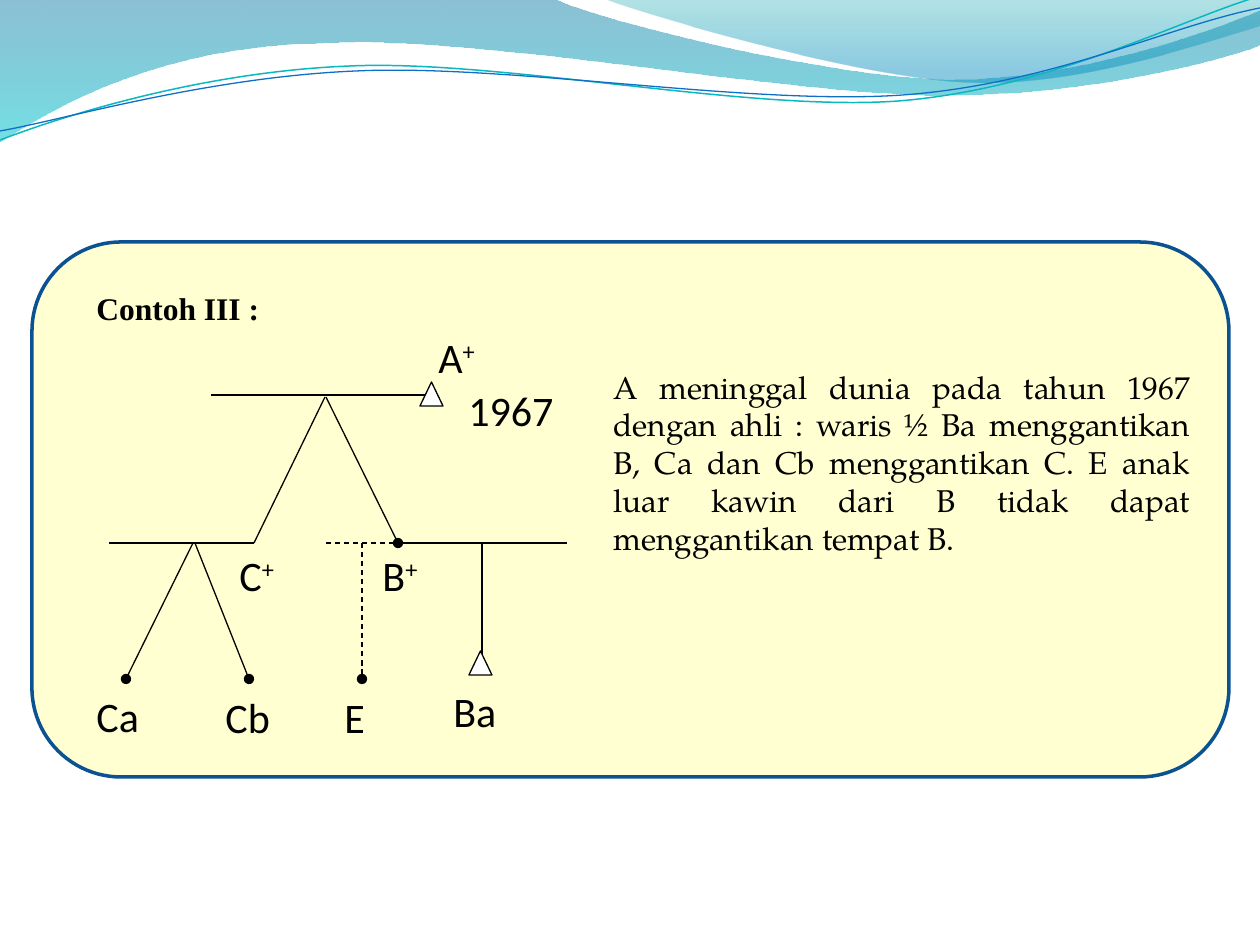
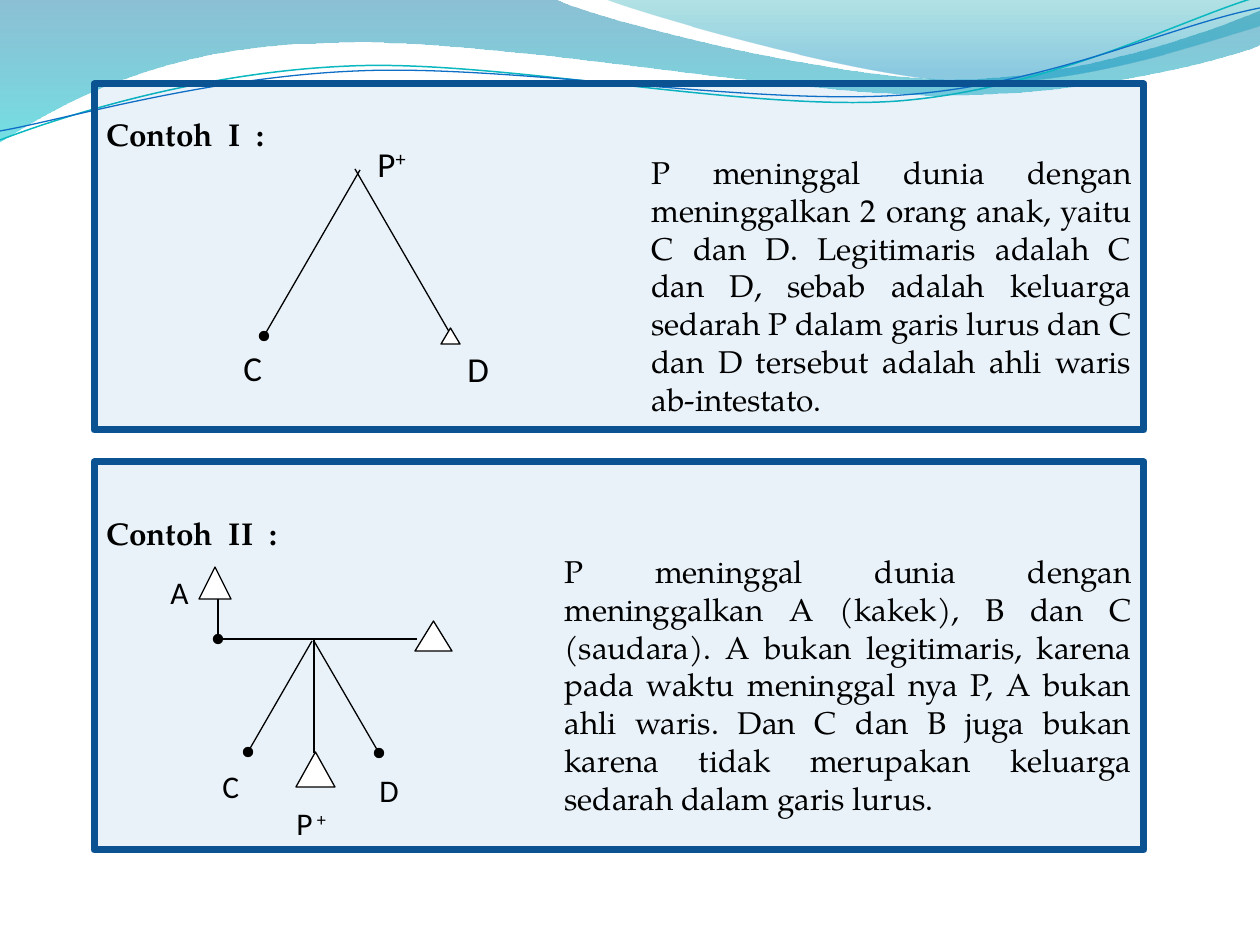
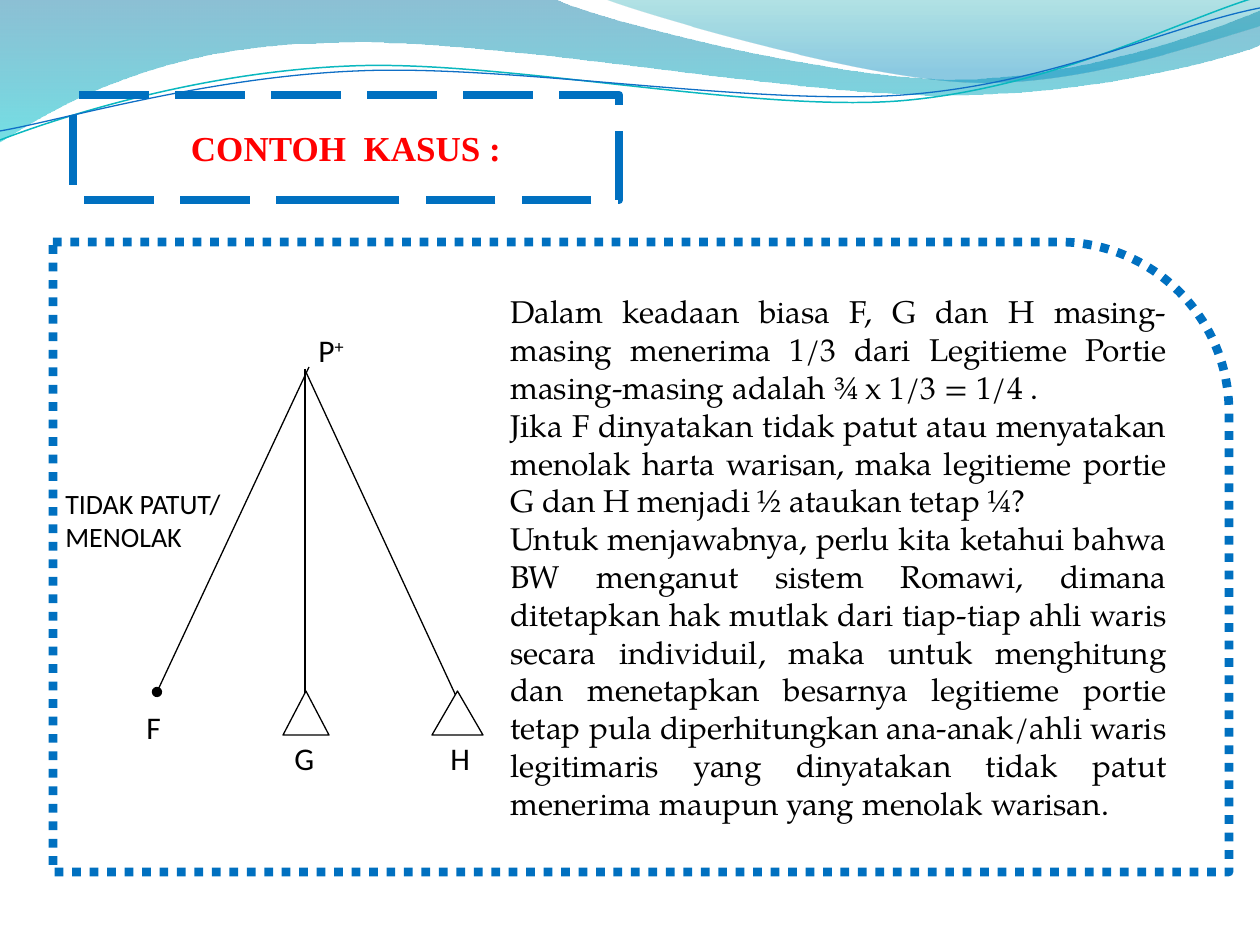
import pptx
import pptx.dml.color
import pptx.enum.dml
import pptx.enum.shapes
import pptx.enum.text
import pptx.oxml
import pptx.oxml.ns
import pptx.util

RGBColor = pptx.dml.color.RGBColor
SHAPE = pptx.enum.shapes.MSO_SHAPE
DASH = pptx.enum.dml.MSO_LINE
ALIGN = pptx.enum.text.PP_ALIGN
MIDDLE = pptx.enum.text.MSO_ANCHOR.MIDDLE

BLACK = RGBColor(0x00, 0x00, 0x00)
WHITE = RGBColor(0xFF, 0xFF, 0xFF)
RED = RGBColor(0xFF, 0x00, 0x00)
YELLOW = RGBColor(0xFF, 0xFF, 0x00)
BLUE = RGBColor(0x0F, 0x6F, 0xC6)
NAVY = RGBColor(0x0B, 0x52, 0x92)
BRIGHT_BLUE = RGBColor(0x00, 0x70, 0xC0)
TEAL = RGBColor(0x0A, 0xB8, 0xBF)
WAVE_BLUE = RGBColor(0x00, 0x74, 0xA1)
WAVE_CYAN = RGBColor(0x00, 0xC6, 0xCF)
CREST_TEAL = RGBColor(0x00, 0xA1, 0xA9)
CREST_BLUE = RGBColor(0x00, 0x8B, 0xBF)

BODY_FONT = "TeX Gyre Pagella"
LABEL_FONT = "Calibri"
HEADING_FONT = "Times New Roman"

PX_PER_INCH = 126
TITLE_ONLY, BLANK = 5, 6

# Each step is one point (straight) or three points (cubic curve).
WAVE = [[(0, 0)], [(554, -1)],
        [(600, 21), (837, 79), (955, 79)], [(1075, 79), (1207, 33), (1260, 11)],
        [(1261, 45)],
        [(1239, 55), (1096, 96), (940, 95)], [(784, 95), (481, 35), (324, 43)],
        [(163, 45), (58, 105), (-1, 142)], [(0, 0)]]
CREST = [[(604, -1)], [(641, 14), (859, 78), (969, 82)],
         [(1079, 87), (1211, 40), (1260, 26)], [(1260, 0)], [(604, -1)]]
TEAL_THREAD = [[(0, 140)], [(60, 117), (199, 72), (349, 66)],
               [(498, 59), (747, 112), (898, 101)], [(1050, 89), (1182, 19), (1257, -3)]]
BLUE_THREAD = [[(0, 131)], [(59, 121), (207, 77), (357, 71)],
               [(508, 64), (752, 106), (903, 95)], [(1053, 84), (1168, 26), (1260, 8)]]


def px(length):
    return pptx.util.Emu(round(length * 914400 / PX_PER_INCH))


def make_element(tag, attributes="", content=""):
    return pptx.oxml.parse_xml(
        f'<{tag} {pptx.oxml.ns.nsdecls("a")} {attributes}>{content}</{tag}>')


def set_opacity(shape, *percents):
    """Give the fill colours of a shape, in order, their opacity."""
    colours = shape.element.spPr.iter(pptx.oxml.ns.qn("a:srgbClr"))
    for colour, percent in zip(colours, percents):
        colour.append(make_element("a:alpha", f'val="{percent * 1000}"'))


def style_line(line, colour, width, dash=None):
    line.color.rgb = colour
    line.width = pptx.util.Pt(width)
    if dash:
        line.dash_style = dash


def style_font(font, name, size, colour=BLACK, bold=False):
    font.name = name
    font.size = pptx.util.Pt(size)
    font.color.rgb = colour
    font.bold = bold


def bend_curves(shape, steps):
    """Join the three straight segments of each curved step into one cubic curve."""
    segments = iter(list(shape.element.spPr.iter(pptx.oxml.ns.qn("a:lnTo"))))
    for step in steps[1:]:
        parts = [next(segments) for _ in step]
        if len(parts) == 1:
            continue
        curve = make_element("a:cubicBezTo")
        parts[0].addprevious(curve)
        for part in parts:
            curve.append(part[0])
            part.getparent().remove(part)


def add_outline(page, steps, close):
    points = [(px(x), px(y)) for step in steps for x, y in step]
    builder = page.shapes.build_freeform(*points[0])
    builder.add_line_segments(points[1:], close=close)
    shape = builder.convert_to_shape()
    bend_curves(shape, steps)
    shape.shadow.inherit = False
    return shape


def add_gradient_wave(page, steps, stops):
    wave = add_outline(page, steps, True)
    wave.line.fill.background()
    wave.fill.gradient()
    wave.fill.gradient_angle = 270
    for stop, (position, colour, _) in zip(wave.fill.gradient_stops, stops):
        stop.position = position
        stop.color.rgb = colour
    set_opacity(wave, *(opacity for _, _, opacity in stops))
    return wave


def add_thread(page, steps, colour, width):
    thread = add_outline(page, steps, False)
    thread.fill.background()
    style_line(thread.line, colour, width)
    return thread


def decorate_master(deck, page):
    """Draw the waves on a page and move them to the master, for all slides."""
    waves = [
        add_gradient_wave(page, WAVE, [(0, WAVE_BLUE, 45), (1, WAVE_CYAN, 55)]),
        add_gradient_wave(page, CREST, [(0, CREST_TEAL, 30), (0.8, CREST_BLUE, 45)]),
        add_thread(page, TEAL_THREAD, TEAL, 0.85),
        add_thread(page, BLUE_THREAD, BLUE, 0.75),
    ]
    for number, wave in enumerate(waves, 20):
        wave.element.nvSpPr.cNvPr.set("id", str(number))
        deck.slide_master.shapes.element.append(wave.element)


def add_shape(page, kind, area, line, fill=None):
    shape = page.shapes.add_shape(kind, *map(px, area))
    shape.shadow.inherit = False
    style_line(shape.line, *line)
    if fill:
        shape.fill.solid()
        shape.fill.fore_color.rgb = fill
    else:
        shape.fill.background()
    return shape


def fill_card(card, indent, texts, heading=None):
    """Write justified text, set in from the left, under an optional heading."""
    frame = card.text_frame
    frame.word_wrap = True
    frame.vertical_anchor = MIDDLE
    for index, text in enumerate([heading, *texts] if heading else texts):
        para = frame.add_paragraph() if index else frame.paragraphs[0]
        para.text = text
        para.alignment = ALIGN.JUSTIFY
        style_font(para.font, BODY_FONT, 18, bold=text == heading)
        if text == heading:
            para.line_spacing = 1.5
        else:
            para._p.get_or_add_pPr().set("marL", str(px(indent)))


def add_label(page, text, area, size, name=LABEL_FONT, bold=False, wrap=True):
    """Add a text box; a plus sign in the text, with a space before it, is raised."""
    box = page.shapes.add_textbox(*map(px, area))
    box.text_frame.word_wrap = wrap
    para = box.text_frame.paragraphs[0]
    style_font(para.font, name, size, bold=bold)
    base = text.rstrip(" +")
    para.add_run().text = base
    if base != text:
        span = para.add_run()
        span.text = text[len(base):]
        span.font._element.set("baseline", "30000")


def add_branch(page, ends, dot=False, dash=None):
    """Add a family line, with a dot at its end for a daughter."""
    branch = page.shapes.add_connector(
        pptx.enum.shapes.MSO_CONNECTOR.STRAIGHT, *map(px, ends))
    style_line(branch.line, BLACK, 0.75, dash)
    if dot:
        branch.line._get_or_add_ln().append(make_element("a:tailEnd", 'type="oval"'))
    branch.element.spPr.append(make_element("a:effectLst"))


def add_family(page, size, plain, dotted, triangles, labels):
    for ends in plain:
        add_branch(page, ends)
    for ends in dotted:
        add_branch(page, ends, dot=True)
    for area in triangles:
        add_shape(page, SHAPE.ISOSCELES_TRIANGLE, area, (BLACK, 0.75), WHITE)
    for text, *area in labels:
        add_label(page, text, area, size)


def build_example_three(page):
    card = add_shape(page, SHAPE.ROUNDED_RECTANGLE, (32, 242, 1197, 535), (NAVY, 2), YELLOW)
    set_opacity(card, 18)
    fill_card(card, 543, [
        "A meninggal dunia pada tahun 1967 dengan ahli : waris ½ Ba menggantikan B, "
        "Ca dan Cb menggantikan C. E anak luar kawin dari B tidak dapat menggantikan "
        "tempat B."])
    card.text_frame.margin_bottom = px(101)
    add_branch(page, (326, 543, 398, 543), dash=DASH.DASH)
    add_branch(page, (362, 543, 362, 679), dot=True, dash=DASH.DASH)
    add_family(
        page, 24,
        plain=[(211, 395, 426, 395), (325, 397, 254, 543), (398, 543, 567, 543),
               (254, 543, 109, 543), (482, 543, 482, 661)],
        dotted=[(326, 397, 398, 543), (193, 543, 126, 679), (195, 543, 249, 679)],
        triangles=[(420, 382, 23, 24), (469, 651, 23, 24)],
        labels=[("Ca", 84, 684, 81, 59), ("Cb", 213, 685, 81, 59),
                ("E", 332, 685, 81, 59), ("Ba", 441, 679, 81, 59),
                ("C+", 227, 543, 81, 59), ("B+", 370, 543, 81, 59),
                ("A+", 426, 325, 81, 59), ("1967", 456, 378, 131, 59)])
    add_label(page, "Contoh III :", (84, 283, 190, 50), 18, HEADING_FONT,
              bold=True, wrap=False)


def add_blue_card(page, top, height, indent, heading, text):
    card = add_shape(page, SHAPE.RECTANGLE, (94, top, 1050, height), (NAVY, 4), BLUE)
    set_opacity(card, 9)
    fill_card(card, indent, [text], heading)


def build_examples_one_and_two(page):
    add_blue_card(
        page, 84, 346, 545, "Contoh  I  :",
        "P meninggal dunia dengan meninggalkan 2 orang anak, yaitu C dan D. Legitimaris "
        "adalah C dan D, sebab adalah keluarga sedarah P dalam garis lurus dan C dan D "
        "tersebut adalah ahli waris ab-intestato.")
    add_family(
        page, 20,
        plain=[(355, 169, 451, 335)],
        dotted=[(360, 170, 264, 336)],
        triangles=[(441, 328, 19, 16)],
        labels=[("P+", 365, 136, 71, 37), ("C", 231, 340, 71, 37), ("D", 455, 341, 71, 37)])

    add_blue_card(
        page, 462, 388, 458, "Contoh  II  :",
        "P meninggal dunia dengan meninggalkan A (kakek), B dan C (saudara). A bukan "
        "legitimaris, karena pada waktu meninggal nya P, A bukan ahli waris. Dan C dan B "
        "juga bukan karena tidak merupakan keluarga sedarah dalam garis lurus.")
    add_family(
        page, 18,
        plain=[(314, 639, 314, 753), (219, 639, 417, 639)],
        dotted=[(218, 575, 218, 639), (312, 641, 248, 752), (314, 641, 379, 753)],
        triangles=[(199, 567, 32, 32), (415, 621, 37, 30), (296, 752, 39, 35)],
        labels=[("A", 158, 567, 32, 29), ("C", 210, 761, 32, 29),
                ("P +", 284, 798, 105, 64), ("D", 367, 765, 32, 29)])


def format_title(title, text, area):
    """Turn the title placeholder into a dashed ellipse around its text."""
    title.left, title.top, title.width, title.height = map(px, area)
    title.element.spPr.append(make_element("a:prstGeom", 'prst="ellipse"', "<a:avLst/>"))
    title.fill.background()
    style_line(title.line, BRIGHT_BLUE, 5, DASH.LONG_DASH)
    frame = title.text_frame
    frame.auto_size = pptx.enum.text.MSO_AUTO_SIZE.NONE
    frame.vertical_anchor = MIDDLE
    para = frame.paragraphs[0]
    para.text = text
    para.alignment = ALIGN.CENTER
    style_font(para.font, HEADING_FONT, 20, RED, bold=True)


def build_case(page):
    format_title(page.shapes.title, "CONTOH  KASUS :", (73, 95, 546, 105))
    card = add_shape(page, SHAPE.ROUND_1_RECTANGLE, (53, 242, 1176, 630),
                     (BRIGHT_BLUE, 5, DASH.ROUND_DOT))
    card.adjustments[0] = 0.27
    fill_card(card, 445, [
        "Dalam keadaan biasa F, G dan H masing-masing menerima 1/3 dari Legitieme Portie "
        "masing-masing adalah ¾ x 1/3 = 1/4 .",
        "Jika F dinyatakan tidak patut atau menyatakan menolak harta warisan, maka "
        "legitieme portie G dan H menjadi ½ ataukan tetap ¼?",
        "Untuk menjawabnya, perlu kita ketahui bahwa BW menganut sistem Romawi, dimana "
        "ditetapkan hak mutlak dari tiap-tiap ahli waris secara individuil, maka untuk "
        "menghitung dan menetapkan besarnya legitieme portie tetap pula diperhitungkan "
        "ana-anak/ahli waris legitimaris yang dinyatakan tidak patut menerima maupun yang "
        "menolak warisan."])
    add_family(
        page, 18,
        plain=[(305, 369, 305, 701), (305, 370, 456, 696)],
        dotted=[(309, 367, 157, 692)],
        triangles=[(283, 691, 46, 44), (432, 691, 51, 44)],
        labels=[("P+", 306, 325, 84, 71), ("F", 134, 702, 66, 54),
                ("G", 282, 733, 66, 54), ("H", 438, 733, 66, 54)])
    add_label(page, "TIDAK PATUT/ MENOLAK", (53, 480, 200, 95), 16)


def main():
    deck = pptx.Presentation()
    deck.slide_width, deck.slide_height = px(1260), px(945)
    pages = [deck.slides.add_slide(deck.slide_layouts[layout])
             for layout in (BLANK, BLANK, TITLE_ONLY)]
    decorate_master(deck, pages[0])
    build_example_three(pages[0])
    build_examples_one_and_two(pages[1])
    build_case(pages[2])
    deck.save("out.pptx")


if __name__ == "__main__":
    main()
